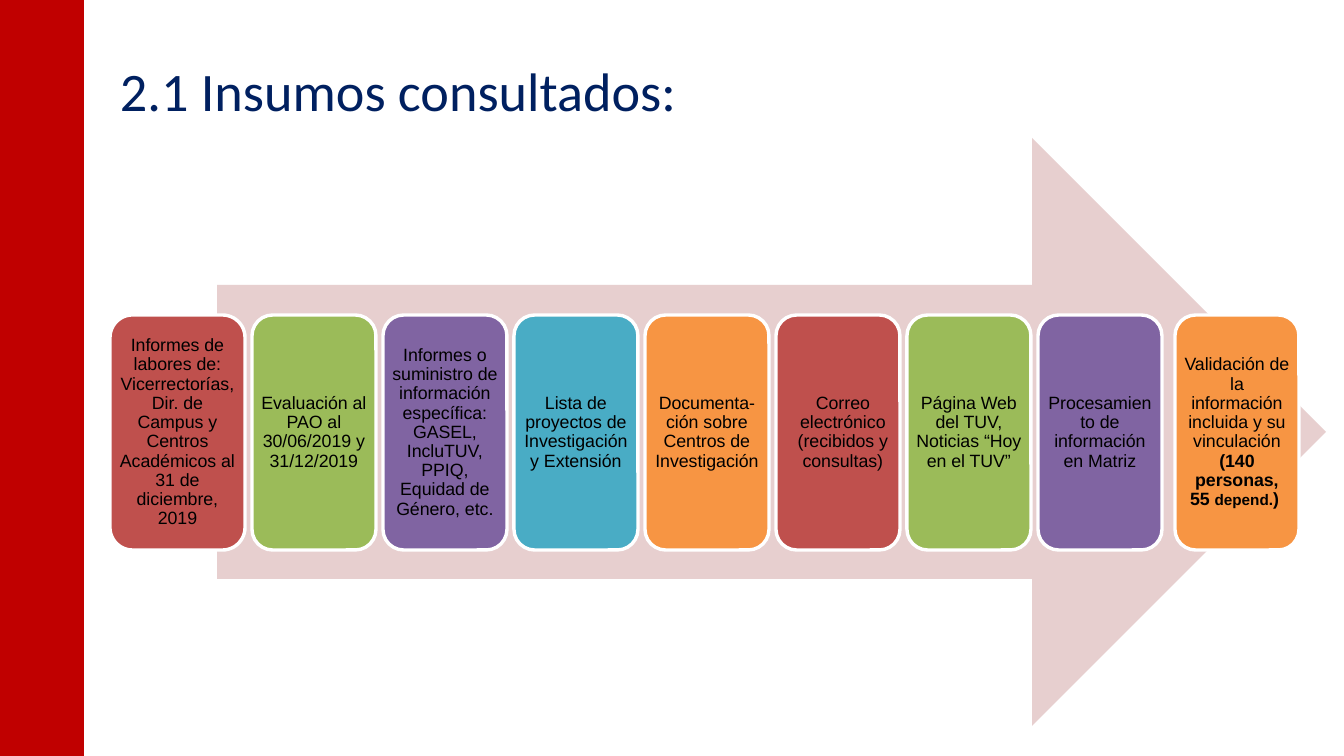
from pptx import Presentation
from pptx.dml.color import RGBColor
from pptx.enum.shapes import MSO_SHAPE as Shape
from pptx.enum.text import MSO_ANCHOR as Anchor, MSO_AUTO_SIZE as AutoSize, PP_ALIGN as Align
from pptx.util import Pt

EMU_PER_PX = 7495
WIDTH, HEIGHT = 1344, 756
COLORS = {
    "navy": "002060", "black": "000000", "white": "FFFFFF",
    "band": "C00000", "arrow": "E7CFCF", "red": "BF504D",
    "green": "9BBB59", "purple": "8064A2", "teal": "49ACC5", "orange": "F79543",
}
CARD_COLORS = ["red", "green", "purple", "teal", "orange"]
CARD_TOP, CARD_WIDTH, CARD_HEIGHT = 315, 124, 235
SECOND_CARD_LEFT, CARD_PITCH = 252, 131

# Each card is a list of runs: text and its own format
CARDS = [
    [("Informes de labores de: Vicerrectorías, Dir. de Campus y Centros "
      "Académicos al 31 de diciembre, 2019", {})],
    [("Evaluación al PAO al 30/06/2019 y 31/12/2019", {})],
    [("Informes o suministro de información específica: GASEL, IncluTUV, "
      "PPIQ, Equidad de Género, etc.", {})],
    [("Lista de proyectos de Investigación y Extensión", {})],
    [("Documenta-ción sobre Centros de Investigación", {})],
    [("Correo electrónico (recibidos y consultas)", {})],
    [("Página Web del TUV, Noticias “Hoy en el TUV”", {})],
    [("Procesamiento de información en Matriz", {})],
    [("Validación de la información incluida y su vinculación ", {}),
     ("(140 personas, 55 ", {"bold": True}),
     ("depend.", {"bold": True, "size": 9}),
     (") ", {"bold": True})],
]
# Cards that leave the even row: index to left, width, insets
CARD_PLACES = {
    0: {"left": 110, "width": 135},
    5: {"insets": (10, 3, 0, 3)},
    8: {"left": 1175},
}


def px(value):
    return value * EMU_PER_PX


def color(name):
    return RGBColor.from_string(COLORS[name])


def add_run(paragraph, text, font="Arial", size=10.5, ink="black", bold=False):
    run = paragraph.add_run()
    run.text = text
    run.font.name = font
    run.font.size = Pt(size)
    run.font.bold = bold
    run.font.color.rgb = color(ink)


class SlideBuilder:
    def __init__(self, presentation):
        self.slide = presentation.slides.add_slide(presentation.slide_layouts[5])

    def frame_paragraph(self, shape, align, insets):
        """Format the text frame and return its first paragraph."""
        frame = shape.text_frame
        frame.word_wrap = True
        frame.auto_size = AutoSize.NONE
        frame.vertical_anchor = Anchor.MIDDLE
        (frame.margin_left, frame.margin_top,
         frame.margin_right, frame.margin_bottom) = map(px, insets)
        paragraph = frame.paragraphs[0]
        paragraph.alignment = align
        paragraph.line_spacing = 0.9
        return paragraph

    def title(self, text, left, top, width, height):
        title = self.slide.shapes.title
        title.left, title.top, title.width, title.height = map(px, (left, top, width, height))
        paragraph = self.frame_paragraph(title, Align.LEFT, (0, 0, 0, 0))
        add_run(paragraph, text, font="Calibri", size=32, ink="navy")

    def block(self, kind, left, top, width, height, fill, outline=None):
        shape = self.slide.shapes.add_shape(kind, *map(px, (left, top, width, height)))
        shape.shadow.inherit = False
        shape.fill.solid()
        shape.fill.fore_color.rgb = color(fill)
        if outline:
            shape.line.color.rgb = color(outline)
            shape.line.width = Pt(2)
        else:
            shape.line.fill.background()
        return shape

    def card(self, runs, fill, left, width=CARD_WIDTH, insets=(3, 3, 3, 3)):
        shape = self.block(Shape.ROUNDED_RECTANGLE, left, CARD_TOP, width, CARD_HEIGHT,
                           fill, outline="white")
        paragraph = self.frame_paragraph(shape, Align.CENTER, insets)
        for text, run_format in runs:
            add_run(paragraph, text, **run_format)


def main():
    presentation = Presentation()
    presentation.slide_width, presentation.slide_height = px(WIDTH), px(HEIGHT)
    builder = SlideBuilder(presentation)

    # Title and background arrow
    builder.title("2.1 Insumos consultados:", 120, 30, 1158, 127)
    builder.block(Shape.RIGHT_ARROW, 217, 138, 1109, 588, "arrow")

    # Row of cards
    for index, runs in enumerate(CARDS):
        place = {"left": SECOND_CARD_LEFT + (index - 1) * CARD_PITCH}
        place.update(CARD_PLACES.get(index, {}))
        fill = "orange" if index == 8 else CARD_COLORS[index % 5]
        if 5 <= index < 8:
            fill = CARD_COLORS[index - 5]
        builder.card(runs, fill, **place)

    # Side band
    builder.block(Shape.RECTANGLE, 0, 0, 84, HEIGHT, "band")
    presentation.save("out.pptx")


if __name__ == "__main__":
    main()
